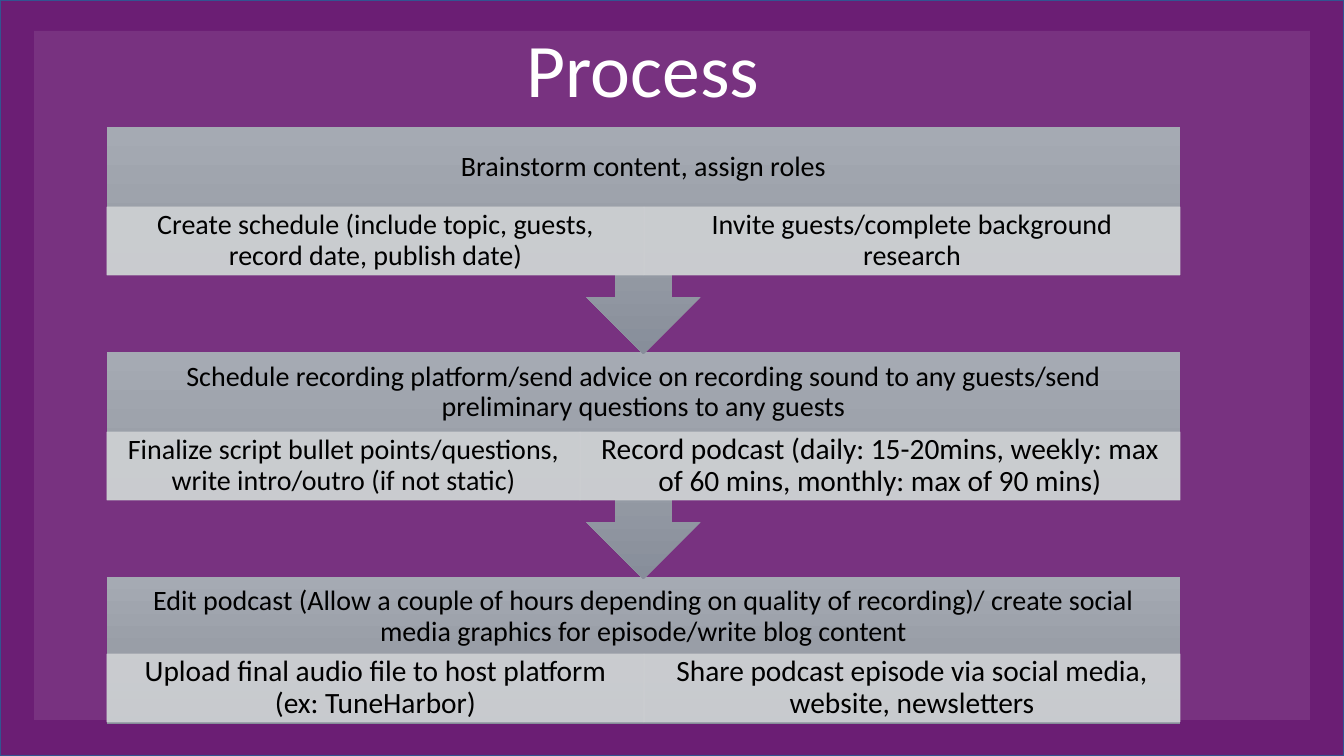
"""Build the podcast process slide."""
import copy
from dataclasses import dataclass

import lxml.etree
import pptx
import pptx.dml.color
import pptx.enum.shapes
import pptx.enum.text
import pptx.oxml.ns
import pptx.util

SHAPE = pptx.enum.shapes.MSO_SHAPE
LEFT, WIDTH, TOP, STEP = 107, 1073, 127, 225
HEAD, CELL = 80, 68


@dataclass(frozen=True)
class Theme:
    """Colours and type sizes."""
    font: str = "Calibri"
    frame: str = "6B1E74"
    edge: str = "325491"
    white: str = "FFFFFF"
    black: str = "000000"
    cell: str = "CFD1D4"
    grad: tuple = ("A5AAB3", "999EA7", "878E9A")
    title: int = 54
    body: int = 20
    large: int = 21


THEME = Theme()

STAGES = (
    ("Brainstorm content, assign roles", HEAD, (
        ("Create schedule (include topic, guests, record date, publish date)", 537, THEME.body),
        ("Invite guests/complete background research", 536, THEME.body))),
    ("Schedule recording platform/send advice on recording sound to any guests/send "
     "preliminary questions to any guests", HEAD, (
        ("Finalize script bullet points/questions, write intro/outro (if not static)", 473, THEME.body),
        ("Record podcast (daily: 15-20mins, weekly: max of 60 mins, monthly: max of 90 mins)",
         600, THEME.large))),
    ("Edit podcast (Allow a couple of hours depending on quality of recording)/ create social "
     "media graphics for episode/write blog content", HEAD - 3, (
        ("Upload final audio file to host platform (ex: TuneHarbor)", 537, THEME.large),
        ("Share podcast episode via social media, website, newsletters", 536, THEME.large))),
)


def px(count):
    """Turn pixels into EMU."""
    return pptx.util.Emu(round(count * 914400 / 100.8))


def paint(fill, tone, alpha=100):
    """Fill with one colour at a given opacity in percent."""
    fill.solid()
    fill.fore_color.rgb = pptx.dml.color.RGBColor.from_string(tone)
    if alpha < 100:
        for color in fill._xPr.iter(pptx.oxml.ns.qn("a:srgbClr")):
            node = lxml.etree.SubElement(color, pptx.oxml.ns.qn("a:alpha"))
            node.set("val", str(alpha * 1000))


def blend(fill):
    """Fill with the three-stop gradient, light at the top."""
    fill.gradient()
    fill.gradient_angle = 270
    first = fill._xPr.find(".//" + pptx.oxml.ns.qn("a:gs"))
    first.addnext(copy.deepcopy(first))
    for stop, tone, place in zip(fill.gradient_stops, THEME.grad, (0, 0.5, 1)):
        stop.color.rgb = pptx.dml.color.RGBColor.from_string(tone)
        stop.position = place


def block(slide, kind, box):
    """Add a plain shape without shadow or line."""
    shape = slide.shapes.add_shape(kind, *map(px, box))
    shape.shadow.inherit = False
    shape.line.fill.background()
    return shape


def write(shape, text, size, tone, pads):
    """Set centred text with left, top, right and bottom pads."""
    frame = shape.text_frame
    frame.text = text
    frame.word_wrap = True
    frame.vertical_anchor = pptx.enum.text.MSO_ANCHOR.MIDDLE
    frame.margin_left, frame.margin_top, frame.margin_right, frame.margin_bottom = map(px, pads)
    line = frame.paragraphs[0]
    line.alignment = pptx.enum.text.PP_ALIGN.CENTER
    line.line_spacing = 0.9
    font = line.runs[0].font
    font.name = THEME.font
    font.size = pptx.util.Pt(size)
    font.color.rgb = pptx.dml.color.RGBColor.from_string(tone)


def ground(slide):
    """Draw the purple frame, its pale panel and the title."""
    frame = block(slide, SHAPE.RECTANGLE, (0, 0, 1344, 756))
    paint(frame.fill, THEME.frame)
    paint(frame.line.fill, THEME.edge)
    frame.line.width = pptx.util.Pt(1)
    panel = block(slide, SHAPE.RECTANGLE, (34, 31, 1276, 689))
    paint(panel.fill, THEME.white, 9)
    title = slide.shapes.add_textbox(*map(px, (116, 32, 1054, 83)))
    write(title, "Process", THEME.title, THEME.white, (0, 0, 0, 0))


def stage(slide, top, text, drop, cells, last):
    """Draw one stage: a headed bar with its row of cells."""
    kind = SHAPE.RECTANGLE if last else SHAPE.DOWN_ARROW_CALLOUT
    tall = 147 if last else 227
    bar = block(slide, kind, (LEFT, top, WIDTH, tall))
    blend(bar.fill)
    write(bar, text, THEME.body, THEME.black, (16, 8, 16, 147 - HEAD + 8))
    left = LEFT
    for label, wide, size in cells:
        cell = block(slide, SHAPE.RECTANGLE, (left, top + drop, wide, CELL))
        paint(cell.fill, THEME.cell, 90)
        paint(cell.line.fill, THEME.cell, 90)
        cell.line.width = pptx.util.Pt(0.5)
        write(cell, label, size, THEME.black, (16, 3, 16, 3))
        left += wide


def main():
    """Build and save the slide."""
    deck = pptx.Presentation()
    deck.slide_width, deck.slide_height = px(1344), px(756)
    slide = deck.slides.add_slide(deck.slide_layouts[6])
    ground(slide)
    final = len(STAGES) - 1
    for rank in range(final, -1, -1):
        stage(slide, TOP + rank * STEP, *STAGES[rank], rank == final)
    deck.save("out.pptx")


if __name__ == "__main__":
    main()
